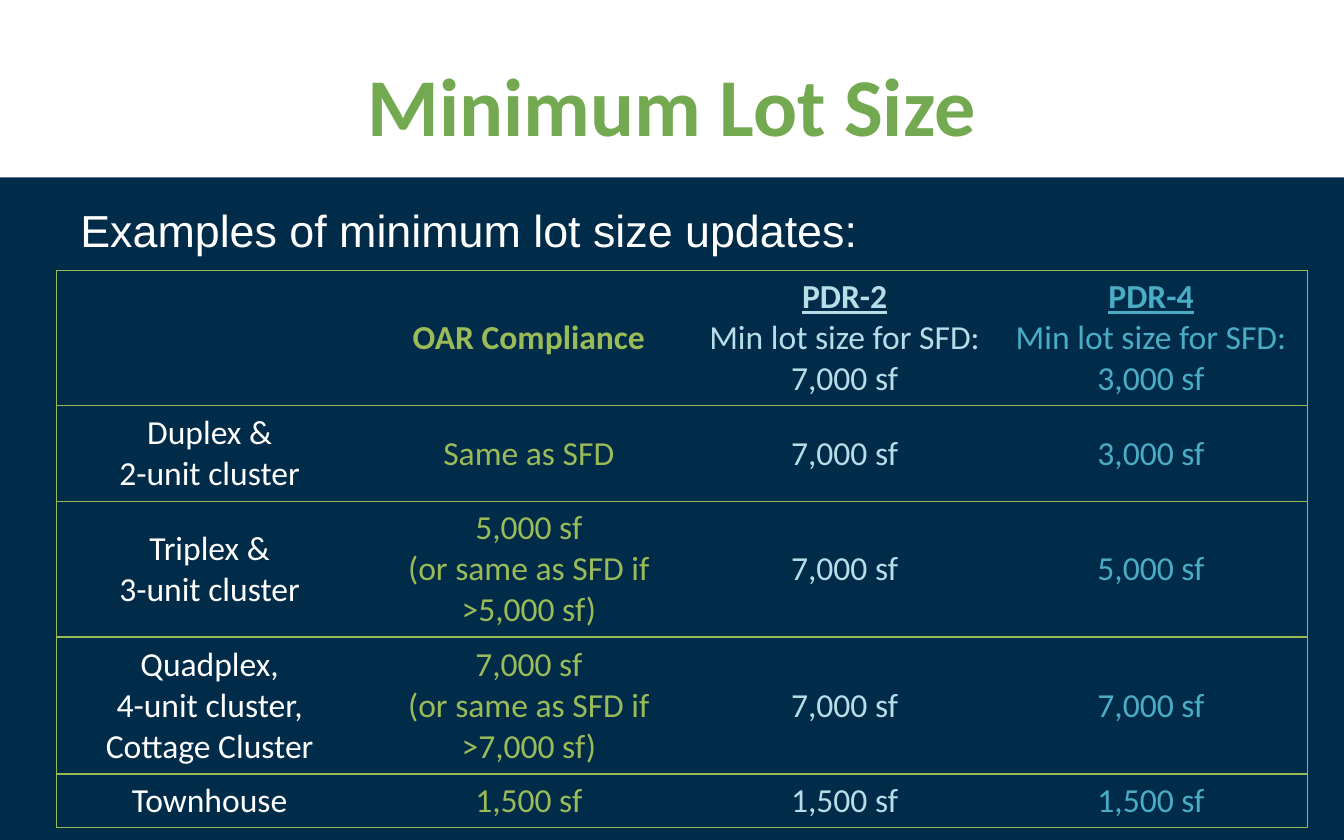
from lxml import etree
from pptx import Presentation
from pptx.dml.color import RGBColor
from pptx.enum.shapes import MSO_SHAPE
from pptx.enum.text import MSO_ANCHOR, PP_ALIGN
from pptx.oxml.ns import qn
from pptx.util import Inches, Pt

RECTANGLE = MSO_SHAPE.RECTANGLE
MIDDLE = MSO_ANCHOR.MIDDLE
CENTER = PP_ALIGN.CENTER
NAVY, WHITE, BORDER = "002B49", "FFFFFF", "98B955"
COLUMN_COLORS = [WHITE, "9BBB59", "B7DEE8", "4BACC6"]
COLUMN_WIDTHS = [2.28, 2.47, 2.23, 2.33]
ROW_HEIGHTS = [1.01, 0.71, 1.01, 1.02, 0.4]
ROWS = [
    ["", "OAR Compliance", "PDR-2\nMin lot size for SFD: 7,000 sf", "PDR-4\nMin lot size for SFD: 3,000 sf"],
    ["Duplex &\v2-unit cluster", "Same as SFD", "7,000 sf", "3,000 sf"],
    ["Triplex &\v3-unit cluster", "5,000 sf\v(or same as SFD if >5,000 sf)", "7,000 sf", "5,000 sf"],
    ["Quadplex,\v4-unit cluster,\vCottage Cluster", "7,000 sf\v(or same as SFD if >7,000 sf)", "7,000 sf", "7,000 sf"],
    ["Townhouse", "1,500 sf", "1,500 sf", "1,500 sf"],
]


def format_runs(paragraph, color, **values):
    for run in paragraph.runs:
        run.font.color.rgb = RGBColor.from_string(color)
        for name, value in values.items():
            setattr(run.font, name, value)


def add_border(cell, tag, visible):
    line = etree.SubElement(cell._tc.get_or_add_tcPr(), qn(tag), w=str(Pt(0.75)))
    if visible:
        fill = etree.SubElement(line, qn("a:solidFill"))
        etree.SubElement(fill, qn("a:srgbClr"), val=BORDER)
    else:
        etree.SubElement(line, qn("a:noFill"))


presentation = Presentation()
presentation.slide_width = Inches(10)
presentation.slide_height = Inches(6.25)
slide = presentation.slides.add_slide(presentation.slide_layouts[5])
slide.background.fill.solid()
slide.background.fill.fore_color.rgb = RGBColor.from_string(NAVY)

band = slide.shapes.add_shape(RECTANGLE, 0, 0, Inches(10), Inches(1.32))
band.shadow.inherit = False
band.fill.solid()
band.fill.fore_color.rgb = RGBColor.from_string(WHITE)
band.line.fill.background()

title = slide.shapes.title
slide.shapes._spTree.append(title._element)
title.left, title.top, title.width, title.height = map(Inches, (0.5, 0.25, 9, 1.04))
title.text_frame.text = "Minimum Lot Size"
title.text_frame.vertical_anchor = MIDDLE
title.text_frame.paragraphs[0].alignment = CENTER
format_runs(title.text_frame.paragraphs[0], "73A950", name="Calibri", size=Pt(44), bold=True)

intro = slide.shapes.add_textbox(Inches(0.5), Inches(1.46), Inches(9), Inches(0.5))
intro.text_frame.word_wrap = True
intro.text_frame.text = "Examples of minimum lot size updates:"
format_runs(intro.text_frame.paragraphs[0], WHITE, name="Arial", size=Pt(24))

table = slide.shapes.add_table(
    len(ROWS), len(COLUMN_WIDTHS), Inches(0.42), Inches(2.01),
    Inches(sum(COLUMN_WIDTHS)), Inches(sum(ROW_HEIGHTS))).table
table.first_row = False
table.horz_banding = False
for column, width in zip(table.columns, COLUMN_WIDTHS):
    column.width = Inches(width)
for row, height in zip(table.rows, ROW_HEIGHTS):
    row.height = Inches(height)

for row_index, texts in enumerate(ROWS):
    for column_index, text in enumerate(texts):
        cell = table.cell(row_index, column_index)
        cell.text = text
        cell.vertical_anchor = MIDDLE
        add_border(cell, "a:lnL", column_index == 0)
        add_border(cell, "a:lnR", column_index == len(texts) - 1)
        add_border(cell, "a:lnT", True)
        add_border(cell, "a:lnB", True)
        cell.fill.background()
        for paragraph_index, paragraph in enumerate(cell.text_frame.paragraphs):
            heading = row_index == 0 and paragraph_index == 0
            paragraph.alignment = CENTER
            format_runs(paragraph, COLUMN_COLORS[column_index], name="Calibri", size=Pt(18),
                        bold=heading, underline=heading and column_index > 1)

presentation.save("out.pptx")
